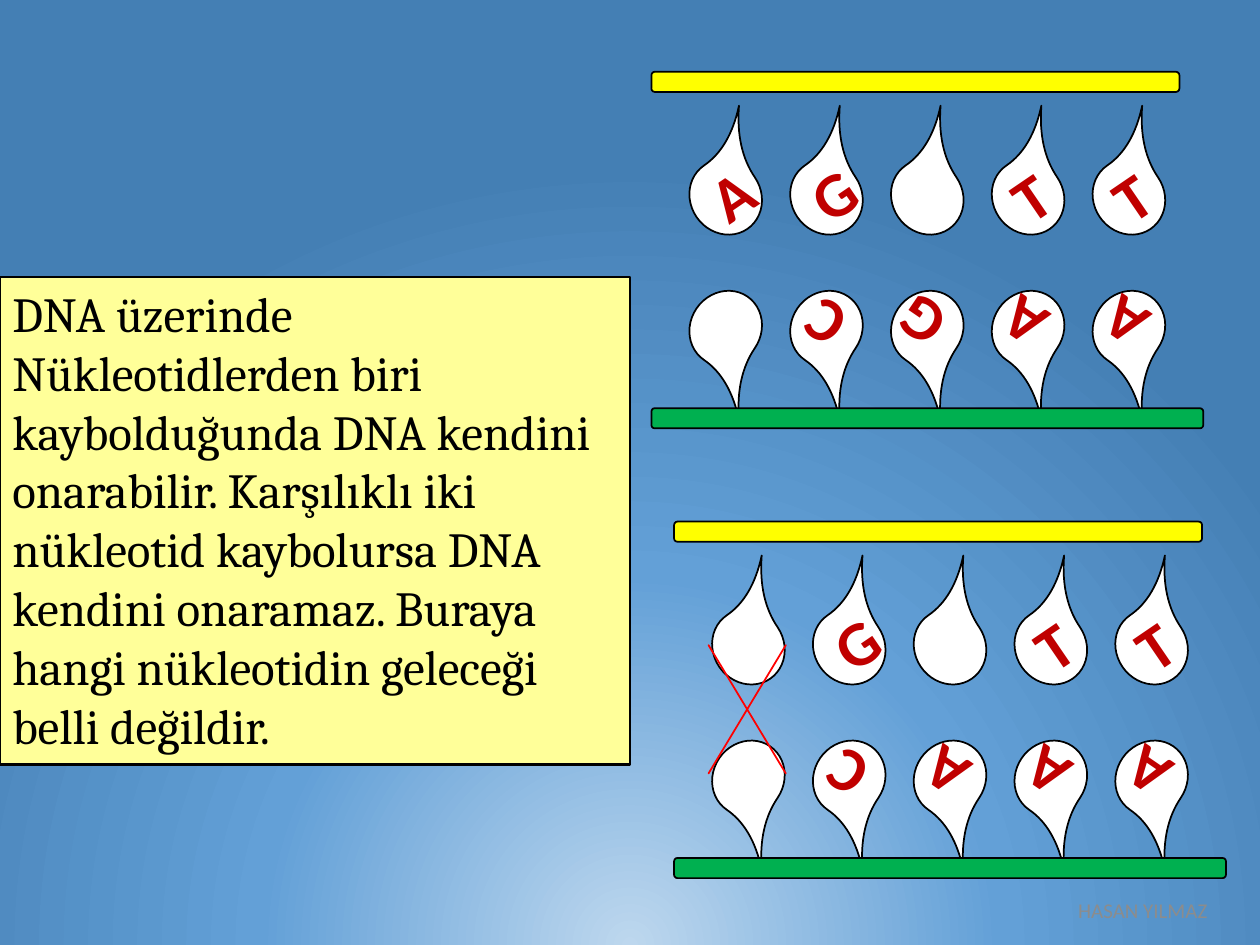
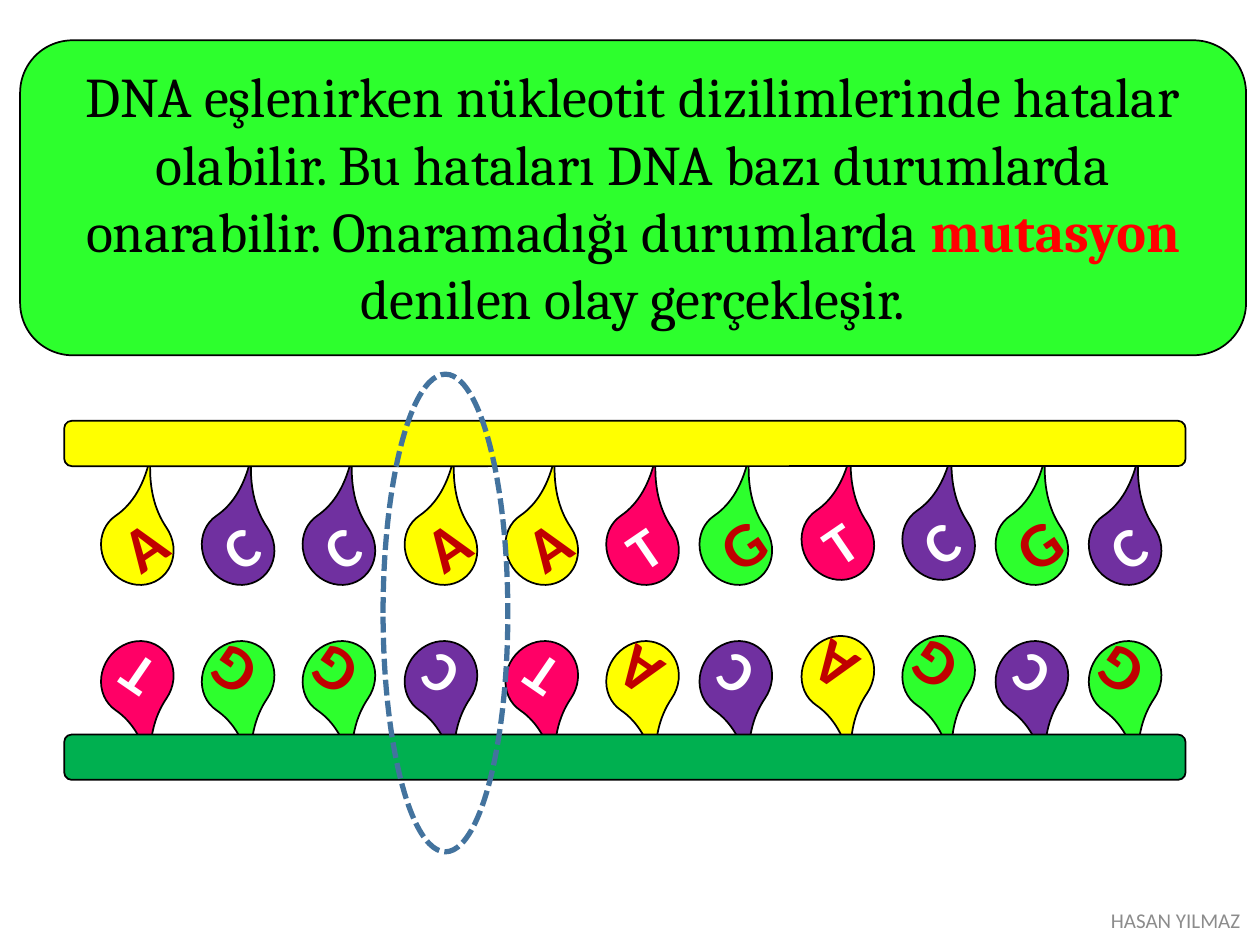
from dataclasses import dataclass

from pptx import Presentation
from pptx import util as u
from pptx.dml.color import RGBColor
from pptx.enum import dml, shapes, text
from pptx.oxml import parse_xml
from pptx.oxml.ns import nsdecls, qn


@dataclass(frozen=True)
class Theme:
    """Colours, fonts and type sizes shared by the slides."""

    black: str = "000000"
    white: str = "FFFFFF"
    red: str = "FF0000"
    dark_red: str = "C00000"
    yellow: str = "FFFF00"
    pale_yellow: str = "FFFF99"
    bright_green: str = "2DFF2D"
    strand_green: str = "00B050"
    purple: str = "7030A0"
    pink: str = "FF0066"
    marker_blue: str = "43739E"
    footer_grey: str = "8C8C8C"
    glow: str = "BDD7EE"
    sky: str = "63A0D7"
    deep_sky: str = "447FB4"
    body_font: str = "Cambria"
    letter_font: str = "Calibri"
    repair_size: int = 28
    mutation_size: int = 32
    letter_size: int = 36
    small_letter_size: int = 32
    footer_size: int = 12


THEME = Theme()
PLAIN_STYLE = (THEME.white, THEME.dark_red, THEME.letter_size)
BASE_STYLES = {
    "A": (THEME.yellow, THEME.dark_red, THEME.letter_size),
    "G": (THEME.bright_green, THEME.dark_red, THEME.letter_size),
    "C": (THEME.purple, THEME.white, THEME.small_letter_size),
    "T": (THEME.pink, THEME.white, THEME.small_letter_size),
}
NUCLEOTIDE_SIZE = (0.56, 0.61)
TILT = 34.3
PITCH = 0.8


def rgb(colour):
    """Return a colour object for a hex string."""
    return RGBColor.from_string(colour)


def add_shape(slide, kind, box, fill=None, line=THEME.black, width=1):
    """Add a flat preset shape with the given fill and outline."""
    shape = slide.shapes.add_shape(kind, *map(u.Inches, box))
    shape.shadow.inherit = False
    if fill:
        shape.fill.solid()
        shape.fill.fore_color.rgb = rgb(fill)
    else:
        shape.fill.background()
    shape.line.color.rgb = rgb(line)
    shape.line.width = u.Pt(width)
    return shape


def add_run(paragraph, words, font, size, colour, bold=False):
    """Add one formatted run to a paragraph."""
    run = paragraph.add_run()
    run.text = words
    run.font.name = font
    run.font.size = u.Pt(size)
    run.font.color.rgb = rgb(colour)
    run.font.bold = bold


def start_text(shape, align, anchor):
    """Prepare the text frame of a shape and return its first paragraph."""
    frame = shape.text_frame
    frame.word_wrap = True
    frame.vertical_anchor = anchor
    paragraph = frame.paragraphs[0]
    paragraph.alignment = align
    return paragraph


def add_message(slide, kind, box, fill, align, size, runs, width=1):
    """Add a filled panel holding runs of (words, colour, bold)."""
    panel = add_shape(slide, kind, box, fill, width=width)
    paragraph = start_text(panel, align, text.MSO_ANCHOR.TOP)
    panel.text_frame.auto_size = text.MSO_AUTO_SIZE.SHAPE_TO_FIT_TEXT
    for words, colour, bold in runs:
        add_run(paragraph, words, THEME.body_font, size, colour, bold)


def add_nucleotide(slide, left, top, letter, style, lower):
    """Add a teardrop nucleotide, hanging from or standing on its strand."""
    fill, colour, size = style
    drop = add_shape(slide, shapes.MSO_SHAPE.TEAR, (left, top, *NUCLEOTIDE_SIZE), fill)
    drop.adjustments[0] = 1.774
    drop.rotation = TILT if lower else 360 - TILT
    if lower:
        drop._element.spPr.find(qn("a:xfrm")).set("flipV", "1")
    if letter.strip():
        paragraph = start_text(drop, text.PP_ALIGN.CENTER, text.MSO_ANCHOR.MIDDLE)
        add_run(paragraph, letter, THEME.letter_font, size, colour, True)


def add_strand(slide, bar, places, letters, styles, lower=False):
    """Add the nucleotides at their places, then the bar that joins them."""
    for (left, top), letter in zip(places, letters):
        style = styles.get(letter, PLAIN_STYLE)
        add_nucleotide(slide, left, top, letter, style, lower)
    fill = THEME.strand_green if lower else THEME.yellow
    add_shape(slide, shapes.MSO_SHAPE.ROUNDED_RECTANGLE, bar, fill)


def add_plain_helix(slide, left, top, upper, lower):
    """Add a white five-pair helix; a space in the letters is a lost base."""
    lefts = [left + 0.31 + PITCH * index for index in range(len(upper))]
    upper_places = [(x, top + 0.69) for x in lefts]
    lower_places = [(x, top + 1.73) for x in lefts]
    add_strand(slide, (left, top, 4.19, 0.16), upper_places, upper, {})
    add_strand(slide, (left, top + 2.67, 4.38, 0.16), lower_places, lower, {}, True)


def add_footer(slide, left, top):
    """Add the author's name near the lower right corner."""
    box = slide.shapes.add_textbox(*map(u.Inches, (left, top, 3.38, 0.4)))
    paragraph = start_text(box, text.PP_ALIGN.CENTER, text.MSO_ANCHOR.MIDDLE)
    add_run(paragraph, "HASAN YILMAZ", THEME.letter_font, THEME.footer_size, THEME.footer_grey)


def set_glow_background(slide):
    """Fill the background with a radial glow rising from below."""
    slide.background.fill.gradient()
    gradient = slide._element.find(".//" + qn("a:gradFill"))
    for child in list(gradient):
        gradient.remove(child)
    stops = ((0, THEME.glow, '<a:alpha val="62000"/>'), (47, THEME.sky, ""), (100, THEME.deep_sky, ""))
    stop_xml = "".join(
        f'<a:gs pos="{position * 1000}"><a:srgbClr val="{colour}">{alpha}</a:srgbClr></a:gs>'
        for position, colour, alpha in stops
    )
    gradient.append(parse_xml(f'<a:gsLst {nsdecls("a")}>{stop_xml}</a:gsLst>'))
    gradient.append(parse_xml(
        f'<a:path {nsdecls("a")} path="circle">'
        '<a:fillToRect l="50000" t="130000" r="50000" b="-30000"/></a:path>'
    ))


def build_repair_slide(slide):
    """Show one helix that can be repaired and one that cannot."""
    set_glow_background(slide)
    add_footer(slide, 7.38, 7.02)
    message = (
        "DNA üzerinde Nükleotidlerden biri kaybolduğunda DNA kendini onarabilir. "
        "Karşılıklı iki nükleotid kaybolursa DNA kendini onaramaz. "
        "Buraya hangi nükleotidin geleceği belli değildir."
    )
    add_message(slide, shapes.MSO_SHAPE.RECTANGLE, (0, 2.2, 5, 3.87), THEME.pale_yellow,
                text.PP_ALIGN.LEFT, THEME.repair_size, [(message, THEME.black, False)], 1.5)
    add_plain_helix(slide, 5.17, 0.57, "AG TT", " CGAA")
    add_plain_helix(slide, 5.35, 4.14, " G TT", " CAAA")
    cross = add_shape(slide, shapes.MSO_SHAPE.MATH_MULTIPLY, (5.34, 4.65, 1.18, 1.96),
                      THEME.red, THEME.red)
    cross.adjustments[0] = 0


def build_mutation_slide(slide):
    """Show a coloured helix with its mismatched pair circled."""
    slide.background.fill.solid()
    slide.background.fill.fore_color.rgb = rgb(THEME.white)
    runs = [
        ("DNA eşlenirken nükleotit dizilimlerinde hatalar olabilir. Bu hataları DNA bazı "
         "durumlarda onarabilir. Onaramadığı durumlarda ", THEME.black, False),
        ("mutasyon", THEME.red, True),
        (" denilen olay gerçekleşir.", THEME.black, False),
    ]
    add_message(slide, shapes.MSO_SHAPE.ROUNDED_RECTANGLE, (0.16, 0.32, 9.73, 2.5),
                THEME.bright_green, text.PP_ALIGN.CENTER, THEME.mutation_size, runs)
    lefts = (0.81, 1.61, 2.41, 3.22, 4.02, 4.82, 5.56, 6.37, 7.17, 7.91, 8.65)
    lifts = [0.04 if index in (7, 8) else 0 for index in range(len(lefts))]
    strands = (("ACCAATGTCGC", 4.04, 3.34, False), ("TGGCTACAGCG", 5.08, 5.83, True))
    for letters, top, bar_top, lower in strands:
        places = [(left, top - lift) for left, lift in zip(lefts, lifts)]
        add_strand(slide, (0.51, bar_top, 8.9, 0.36), places, letters, BASE_STYLES, lower)
    marker = add_shape(slide, shapes.MSO_SHAPE.OVAL, (3.04, 2.97, 0.99, 3.79),
                       line=THEME.marker_blue, width=3)
    marker.line.dash_style = dml.MSO_LINE.SQUARE_DOT
    add_footer(slide, 7.64, 7.1)


def main():
    """Build and save the presentation."""
    presentation = Presentation()
    presentation.slide_width = u.Inches(10)
    presentation.slide_height = u.Inches(7.5)
    for build in (build_repair_slide, build_mutation_slide):
        build(presentation.slides.add_slide(presentation.slide_layouts[6]))
    presentation.save("out.pptx")


if __name__ == "__main__":
    main()
